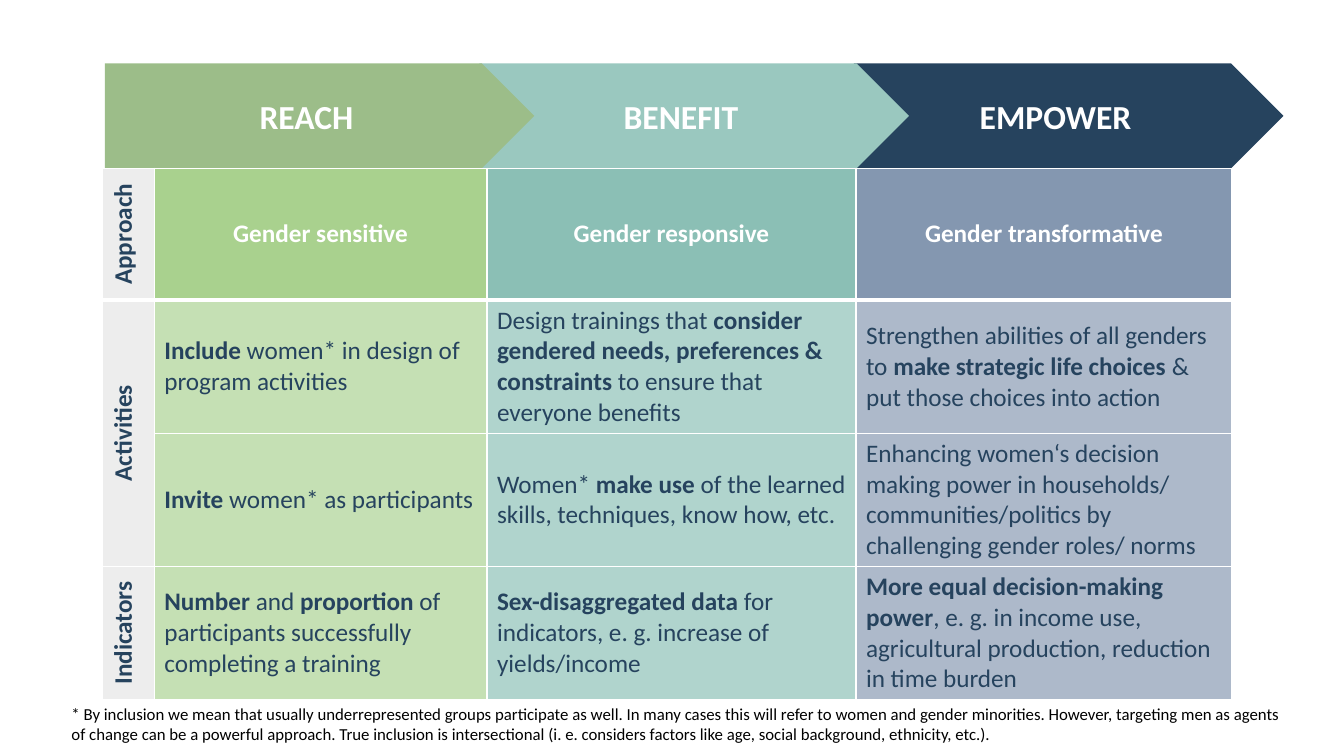
from lxml import etree
from pptx import Presentation
from pptx.dml.color import RGBColor
from pptx.enum.shapes import MSO_SHAPE
from pptx.enum.text import MSO_ANCHOR, PP_ALIGN
from pptx.oxml.ns import qn
from pptx.util import Inches, Pt

FONT = "Calibri"
WHITE = RGBColor(0xFF, 0xFF, 0xFF)
BLACK = RGBColor(0, 0, 0)
NAVY = RGBColor(0x26, 0x43, 0x5E)
LABEL_GREY = RGBColor(0xED, 0xED, 0xED)
APPROACH_FILLS = [RGBColor(0xA9, 0xD1, 0x8E), RGBColor(0x8B, 0xBF, 0xB5), RGBColor(0x84, 0x97, 0xB0)]
DETAIL_FILLS = [RGBColor(0xC5, 0xE0, 0xB4), RGBColor(0xB0, 0xD4, 0xCD), RGBColor(0xAD, 0xB9, 0xCA)]

STAGES = [
    ("REACH", RGBColor(0x9C, 0xBD, 0x89)),
    ("BENEFIT", RGBColor(0x9A, 0xC8, 0xBF)),
    ("EMPOWER", NAVY),
]
COL_WIDTHS = [0.51, 3.3, 3.66, 3.73]
ROWS = [
    ("Approach", "**Gender sensitive**", "**Gender responsive**", "**Gender transformative**"),
    ("Activities",
     "**Include** women* in design of program activities",
     "Design trainings that **consider gendered needs, preferences & constraints** "
     "to ensure that everyone benefits",
     "Strengthen abilities of all genders to **make strategic life choices **"
     "& put those choices into action"),
    ("",
     "**Invite** women* as participants",
     "Women* **make use **of the learned skills, techniques, know how, etc.",
     "Enhancing women‘s decision making power in households/ communities/politics "
     "by challenging gender roles/ norms"),
    ("Indicators",
     "**Number** and **proportion** of participants successfully completing a training",
     "**Sex-disaggregated data **for indicators, e. g. increase of yields/income",
     "**More equal decision-making power**, e. g. in income use, "
     "agricultural production, reduction in time burden"),
]
FOOTNOTE = (
    "* By inclusion we mean that usually underrepresented groups participate as well. "
    "In many cases this will refer to women and gender minorities. However, targeting men "
    "as agents of change can be a powerful approach. True inclusion is intersectional "
    "(i. e. considers factors like age, social background, ethnicity, etc.)."
)


def write(tf, text, size=18, color=NAVY, align=PP_ALIGN.LEFT):
    """Fill a text frame; parts between ** marks are bold."""
    tf.word_wrap = True
    p = tf.paragraphs[0]
    p.alignment = align
    for i, part in enumerate(text.split("**")):
        if part:
            r = p.add_run()
            r.text = part
            r.font.name = FONT
            r.font.size = Pt(size)
            r.font.bold = i % 2 == 1
            r.font.color.rgb = color


def set_borders(cell, top=1, bottom=1):
    """Give a cell white borders, with widths in points."""
    widths = {"a:lnL": 1, "a:lnR": 1, "a:lnT": top, "a:lnB": bottom}
    tc_pr = cell._tc.get_or_add_tcPr()
    for i, (tag, width) in enumerate(widths.items()):
        ln = etree.Element(qn(tag), w=str(Pt(width)))
        fill = etree.SubElement(ln, qn("a:solidFill"))
        etree.SubElement(fill, qn("a:srgbClr"), val=str(WHITE))
        tc_pr.insert(i, ln)


def add_stage_arrows(s, left, top, width, height):
    """Overlapping arrows, with each earlier stage lying on top of the next."""
    arrow_w = 4.26
    step = (width - arrow_w) / (len(STAGES) - 1)
    for i, (name, color) in reversed(list(enumerate(STAGES))):
        sp = s.shapes.add_shape(MSO_SHAPE.PENTAGON, Inches(left + i * step), Inches(top),
                                Inches(arrow_w), Inches(height))
        sp.shadow.inherit = False
        sp.fill.solid()
        sp.fill.fore_color.rgb = color
        sp.line.fill.background()
        sp.text_frame.vertical_anchor = MSO_ANCHOR.MIDDLE
        write(sp.text_frame, f"**{name}**", size=24, color=WHITE, align=PP_ALIGN.CENTER)


def add_matrix(s, left, top, width, height):
    table = s.shapes.add_table(len(ROWS), len(COL_WIDTHS), Inches(left), Inches(top),
                               Inches(width), Inches(height)).table
    table.first_row = table.horz_banding = False
    for col, col_w in zip(table.columns, COL_WIDTHS):
        col.width = Inches(col_w)
    for i, row in enumerate(ROWS):
        table.rows[i].height = Inches(height / len(ROWS))
        fills = [LABEL_GREY] + (DETAIL_FILLS if i else APPROACH_FILLS)
        for j, (text, color) in enumerate(zip(row, fills)):
            cell = table.cell(i, j)
            cell.fill.solid()
            cell.fill.fore_color.rgb = color
            set_borders(cell, top=3 if i == 1 else 1, bottom=1 if i else 3)
            if j == 0:
                cell._tc.get_or_add_tcPr().set("vert", "vert270")
                write(cell.text_frame, f"**{text}**", align=PP_ALIGN.CENTER)
                continue
            cell.vertical_anchor = MSO_ANCHOR.MIDDLE
            if i == 0:
                write(cell.text_frame, text, color=WHITE, align=PP_ALIGN.CENTER)
            else:
                write(cell.text_frame, text)
    table.cell(1, 0).merge(table.cell(2, 0))


def add_footnote(s, left, top, width, height):
    sp = s.shapes.add_textbox(Inches(left), Inches(top), Inches(width), Inches(height))
    write(sp.text_frame, FOOTNOTE, size=12, color=BLACK)


def main():
    prs = Presentation()
    prs.slide_width, prs.slide_height = Inches(13.33), Inches(7.5)
    s = prs.slides.add_slide(prs.slide_layouts[6])
    add_stage_arrows(s, 1.04, 0.63, 11.69, 1.04)
    add_matrix(s, 1.02, 1.67, sum(COL_WIDTHS), 5.23)
    add_footnote(s, 0.61, 6.93, 12.31, 0.5)
    prs.save("out.pptx")


if __name__ == "__main__":
    main()
